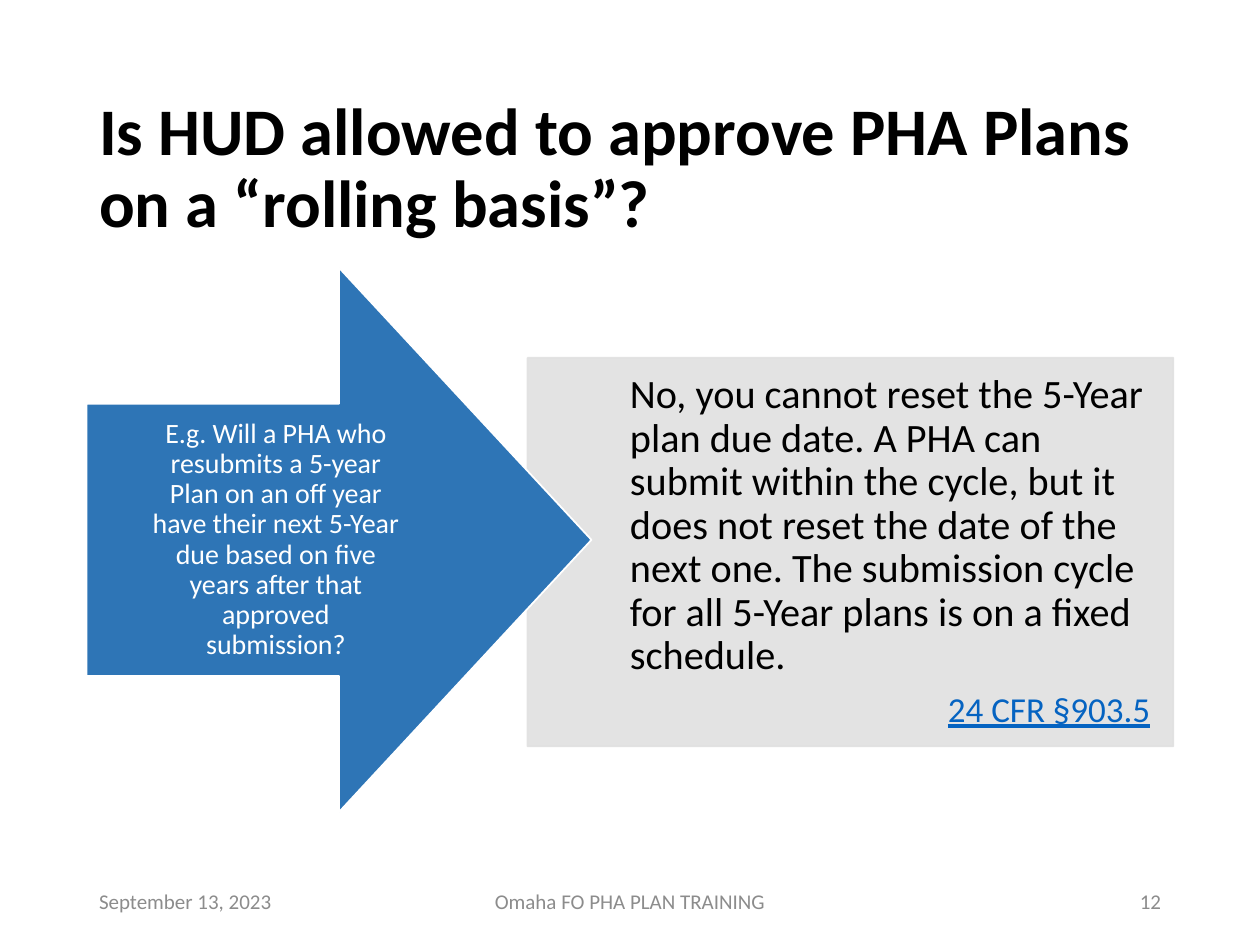
from pptx import Presentation
from pptx.dml.color import RGBColor
from pptx.enum.shapes import MSO_SHAPE
from pptx.enum.text import MSO_ANCHOR, PP_ALIGN
from pptx.oxml.ns import qn
from pptx.util import Pt
from lxml.etree import SubElement

LEFT, CENTER, RIGHT = PP_ALIGN.LEFT, PP_ALIGN.CENTER, PP_ALIGN.RIGHT
SIDE, WIDE = 49.5, 621  # left margin and content width


def color(code):
    return RGBColor.from_string(code)


def write(par, text, size=12, tone="000000", bold=False, line=False,
          align=LEFT, lead=1.0, after=0):
    par.alignment = align
    par.line_spacing = lead
    par.space_before = Pt(0)
    par.space_after = Pt(after)
    run = par.add_run()
    run.text = text
    font = run.font
    font.name, font.size = "Calibri", Pt(size)
    font.bold, font.underline = bold, line
    font.color.rgb = color(tone)


def fade(fill, percent):
    node = fill._xPr.find(qn("a:solidFill"))[0]
    SubElement(node, qn("a:alpha"), val=str(percent * 1000))


class Deck:
    def __init__(self):
        self.file = Presentation()
        self.file.slide_width, self.file.slide_height = Pt(720), Pt(540)
        self.slide = self.file.slides.add_slide(self.file.slide_layouts[5])

    def fit(self, shape, inset):
        frame = shape.text_frame
        frame.word_wrap = True
        frame.vertical_anchor = MSO_ANCHOR.MIDDLE
        (frame.margin_left, frame.margin_top,
         frame.margin_right, frame.margin_bottom) = map(Pt, inset)
        return frame

    def title(self, text, box):
        shape = self.slide.shapes.title
        shape.left, shape.top, shape.width, shape.height = map(Pt, box)
        frame = self.fit(shape, (7.2, 3.6, 7.2, 3.6))
        write(frame.paragraphs[0], text, size=38, bold=True, lead=0.9)

    def note(self, text, left, width, align):
        shape = self.slide.shapes.add_textbox(
            *map(Pt, (left, 500.5, width, 28.75)))
        frame = self.fit(shape, (7.2, 3.6, 7.2, 3.6))
        write(frame.paragraphs[0], text, tone="8C8C8C", align=align)

    def block(self, kind, box, fill, edge, inset, parts, solid=100):
        shape = self.slide.shapes.add_shape(kind, *map(Pt, box))
        shape.shadow.inherit = False
        shape.fill.solid()
        shape.fill.fore_color.rgb = color(fill)
        shape.line.color.rgb = color(edge)
        shape.line.width = Pt(1)
        if solid < 100:
            fade(shape.fill, solid)
            fade(shape.line.fill, solid)
        frame = self.fit(shape, inset)
        for i, (text, style) in enumerate(parts):
            par = frame.add_paragraph() if i else frame.paragraphs[0]
            write(par, text, lead=0.9, **style)


def main():
    deck = Deck()
    deck.title("Is HUD allowed to approve PHA Plans on a “rolling basis”?",
               (SIDE, 57.5, WIDE, 79.5))

    # Footer: date, event, page number
    deck.note("September 13, 2023", SIDE, 162, LEFT)
    deck.note("Omaha FO PHA PLAN TRAINING", 238.5, 243, CENTER)
    deck.note("12", SIDE + WIDE - 162, 162, RIGHT)

    # Answer panel, behind the arrow tip
    answer = ("No, you cannot reset the 5-Year plan due date. A PHA can submit "
              "within the cycle, but it does not reset the date of the next "
              "one. The submission cycle for all 5-Year plans is on a fixed "
              "schedule.")
    deck.block(MSO_SHAPE.RECTANGLE, (301.5, 204.5, 369, 222),
               "E1E1E1", "E1E1E1", (58.5, 13, 13, 13),
               [(answer, dict(size=23, after=8)),
                ("24 CFR §903.5", dict(size=20, tone="0563C1", line=True,
                                       align=RIGHT))], solid=90)

    # Question arrow
    query = ("E.g. Will a PHA who resubmits a 5-year Plan on an off year have "
             "their next 5-Year due based on five years after that approved "
             "submission?")
    deck.block(MSO_SHAPE.RIGHT_ARROW, (SIDE, 153, 288.5, 311),
               "2E75B6", "FFFFFF", (36, 0, 36, 0),
               [(query, dict(size=16, tone="FFFFFF", align=CENTER))])

    deck.file.save("out.pptx")


if __name__ == "__main__":
    main()
